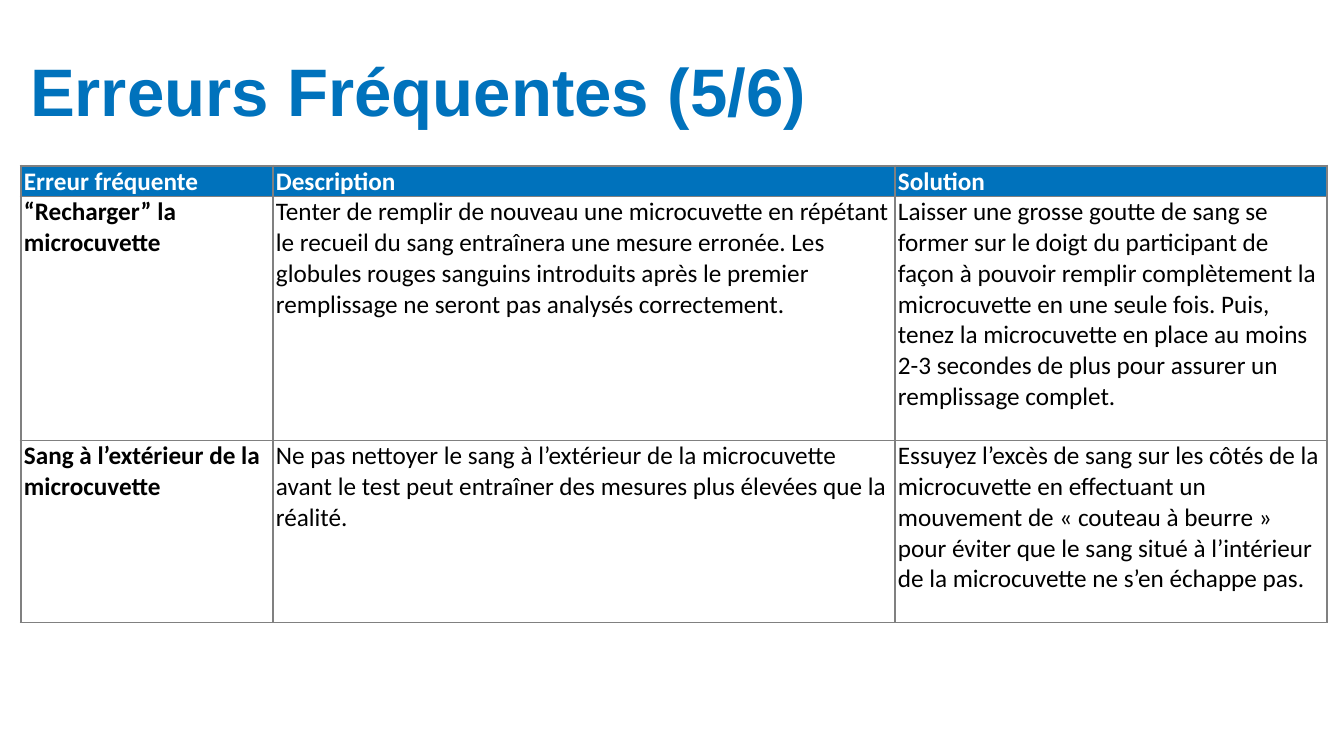
"""Build the slide on frequent errors (5/6) with its table of solutions."""
from dataclasses import dataclass

from lxml.etree import SubElement
from pptx import Presentation
from pptx.dml.color import RGBColor
from pptx.enum.text import MSO_ANCHOR, MSO_AUTO_SIZE, PP_ALIGN
from pptx.oxml.ns import qn
from pptx.slide import Slide
from pptx.table import _Cell as Cell
from pptx.text.text import Font
from pptx.util import Pt

EMU_PER_PX = 12192000 / 1344
COLORS = {"blue": "0072BC", "white": "FFFFFF", "black": "000000", "gray": "808080"}
COL_WIDTHS = (252, 622, 432)
THIN, THICK = 1, 2.25


@dataclass(frozen=True)
class Row:
    height: int
    texts: tuple[str, str, str]
    header: bool = False


ROWS = (
    Row(30, ("Erreur fréquente", "Description", "Solution"), header=True),
    Row(244, (
        "“Recharger” la microcuvette",
        "Tenter de remplir de nouveau une microcuvette en répétant le recueil du sang "
        "entraînera une mesure erronée. Les globules rouges sanguins introduits après "
        "le premier remplissage ne seront pas analysés correctement.",
        "Laisser une grosse goutte de sang se former sur le doigt du participant de "
        "façon à pouvoir remplir complètement la microcuvette en une seule fois. Puis, "
        "tenez la microcuvette en place au moins 2-3 secondes de plus pour assurer un "
        "remplissage complet.",
    )),
    Row(182, (
        "Sang à l’extérieur de la microcuvette",
        "Ne pas nettoyer le sang à l’extérieur de la microcuvette avant le test peut "
        "entraîner des mesures plus élevées que la réalité.",
        "Essuyez l’excès de sang sur les côtés de la microcuvette en effectuant un "
        "mouvement de « couteau à beurre » pour éviter que le sang situé à l’intérieur "
        "de la microcuvette ne s’en échappe pas.",
    )),
)


def px(n: int) -> int:
    return round(n * EMU_PER_PX)


def rgb(name: str) -> RGBColor:
    return RGBColor.from_string(COLORS[name])


def style_font(font: Font, name: str, size: int, color: str, bold: bool) -> None:
    font.name, font.size, font.bold = name, Pt(size), bold
    font.color.rgb = rgb(color)


def set_borders(cell: Cell, widths: dict[str, float]) -> None:
    tc_pr = cell._tc.get_or_add_tcPr()
    for side, width in widths.items():
        ln = SubElement(tc_pr, qn(f"a:ln{side}"), w=str(Pt(width)))
        fill = SubElement(ln, qn("a:solidFill"))
        SubElement(fill, qn("a:srgbClr"), val=COLORS["gray"])


def fill_cell(cell: Cell, row: Row, col: int) -> None:
    cell.margin_left = cell.margin_right = px(3)
    cell.margin_top = cell.margin_bottom = 0
    set_borders(cell, {
        "L": THICK if col == 0 else THIN,
        "R": THICK if col == len(COL_WIDTHS) - 1 else THIN,
        "T": THICK if row.header else THIN,
        "B": THIN,
    })
    if row.header:
        cell.fill.solid()
        cell.fill.fore_color.rgb = rgb("blue")
    else:
        cell.fill.background()
    p = cell.text_frame.paragraphs[0]
    p.text = row.texts[col]
    color = "white" if row.header else "black"
    style_font(p.runs[0].font, "Calibri", 18, color, row.header or col == 0)


def add_error_table(s: Slide) -> None:
    frame = s.shapes.add_table(
        len(ROWS), len(COL_WIDTHS), px(21), px(166),
        px(sum(COL_WIDTHS)), px(sum(row.height for row in ROWS)))
    table = frame.table
    table.horz_banding = False
    for col, width in enumerate(COL_WIDTHS):
        table.columns[col].width = px(width)
    for i, row in enumerate(ROWS):
        table.rows[i].height = px(row.height)
        for col in range(len(COL_WIDTHS)):
            fill_cell(table.cell(i, col), row, col)


def set_title(s: Slide, text: str) -> None:
    sp = s.shapes.title
    sp.left, sp.top, sp.width, sp.height = px(30), px(30), px(1287), px(101)
    tf = sp.text_frame
    tf.text = text
    tf.word_wrap = True
    tf.auto_size = MSO_AUTO_SIZE.NONE
    tf.vertical_anchor = MSO_ANCHOR.BOTTOM
    tf.margin_left = tf.margin_right = tf.margin_top = tf.margin_bottom = 0
    p = tf.paragraphs[0]
    p.alignment = PP_ALIGN.LEFT
    p.line_spacing = 0.9
    style_font(p.runs[0].font, "Arial", 48, "blue", True)


def main() -> None:
    prs = Presentation()
    prs.slide_width, prs.slide_height = px(1344), px(756)
    s = prs.slides.add_slide(prs.slide_layouts[5])
    set_title(s, "Erreurs Fréquentes (5/6)")
    add_error_table(s)
    prs.save("out.pptx")


if __name__ == "__main__":
    main()
